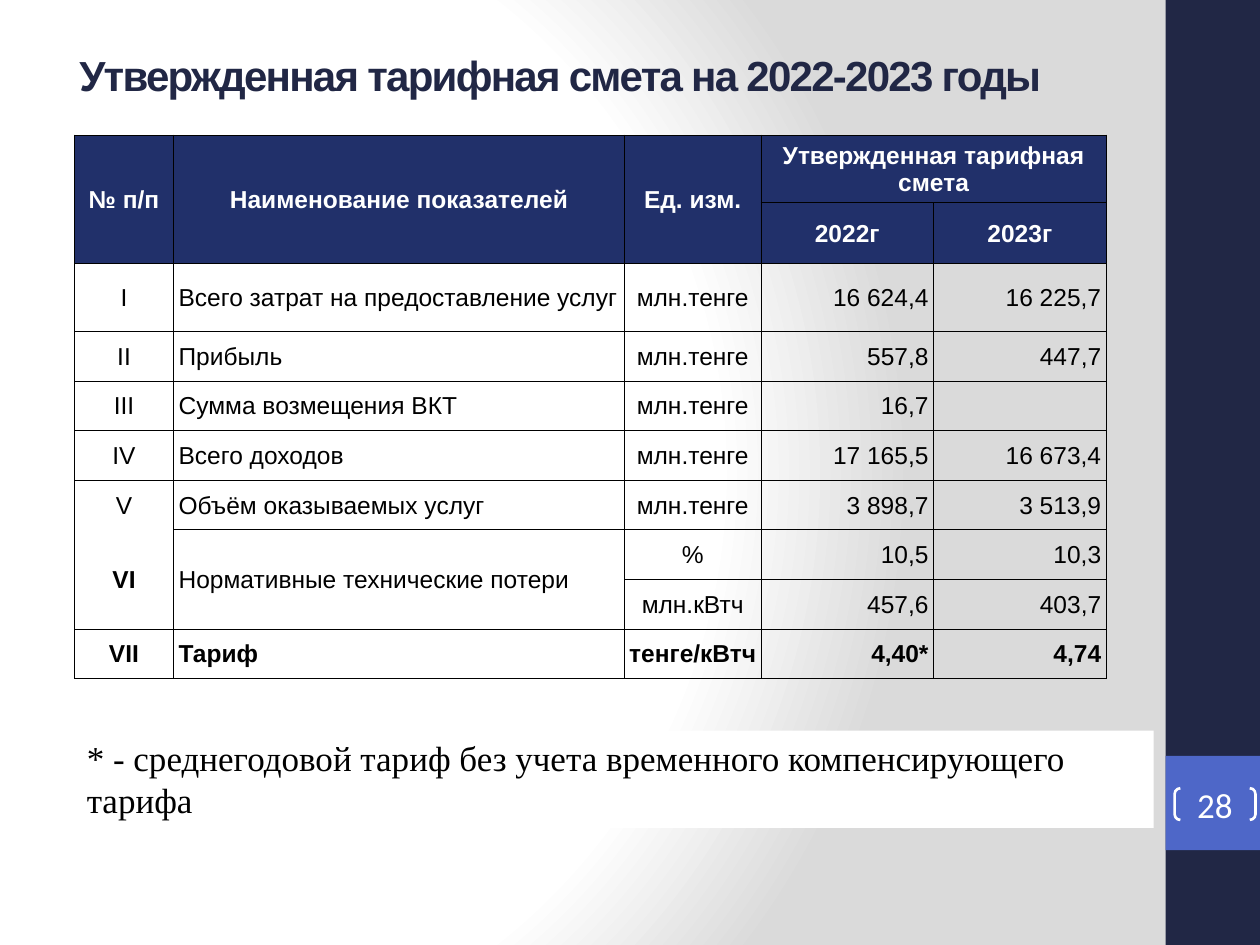
from lxml.etree import SubElement
from pptx import Presentation
from pptx.dml.color import RGBColor
from pptx.enum.shapes import MSO_SHAPE
from pptx.enum.text import MSO_ANCHOR, PP_ALIGN
from pptx.oxml.ns import qn
from pptx.util import Cm, Pt

WHITE = RGBColor(0xFF, 0xFF, 0xFF)
BLACK = RGBColor(0, 0, 0)
GREY = RGBColor(0xDA, 0xDA, 0xDA)
NAVY = RGBColor(0x21, 0x27, 0x45)
BLUE = RGBColor(0x4E, 0x67, 0xC8)
HEADER_BLUE = RGBColor(0x21, 0x30, 0x6A)

COLUMN_WIDTHS = [2.0, 9.09, 2.75, 3.48, 3.48]
ROW_HEIGHTS = [1.37, 1.22, 1.37] + [1.0] * 7
ALIGNMENTS = [PP_ALIGN.CENTER, PP_ALIGN.LEFT, PP_ALIGN.CENTER,
              PP_ALIGN.RIGHT, PP_ALIGN.RIGHT]
HEADER_ROWS = 2
ROWS = [
    ["№ п/п", "Наименование показателей", "Ед. изм.",
     "Утвержденная тарифная смета", ""],
    ["", "", "", "2022г", "2023г"],
    ["I", "Всего затрат на предоставление услуг", "млн.тенге",
     "16 624,4", "16 225,7"],
    ["II", "Прибыль", "млн.тенге", "557,8", "447,7"],
    ["III", "Сумма возмещения ВКТ", "млн.тенге", "16,7", ""],
    ["IV", "Всего доходов", "млн.тенге", "17 165,5", "16 673,4"],
    ["V", "Объём оказываемых услуг", "млн.тенге", "3 898,7", "3 513,9"],
    ["VI", "Нормативные технические потери", "%", "10,5", "10,3"],
    ["", "", "млн.кВтч", "457,6", "403,7"],
    ["VII", "Тариф", "тенге/кВтч", "4,40*", "4,74"],
]
VOLUME_ROW, LOSSES_ROW, TARIFF_ROW = 6, 7, 9
MERGES = [((0, 0), (1, 0)), ((0, 1), (1, 1)), ((0, 2), (1, 2)),
          ((0, 3), (0, 4)), ((7, 0), (8, 0)), ((7, 1), (8, 1))]


def write(paragraph, text, size, font, color, bold=False):
    run = paragraph.add_run()
    run.text = text
    run.font.size = Pt(size)
    run.font.name = font
    run.font.bold = bold
    run.font.color.rgb = color
    return run


def add_block(slide, left, top, width, height, color):
    block = slide.shapes.add_shape(MSO_SHAPE.RECTANGLE, Cm(left), Cm(top),
                                   Cm(width), Cm(height))
    block.shadow.inherit = False
    block.fill.solid()
    block.fill.fore_color.rgb = color
    block.line.fill.background()
    return block


def paint_background(slide):
    """Circular gradient, white on the left and grey on the right."""
    slide.background.fill.gradient()
    gradient = slide.element.find(".//" + qn("a:gradFill"))
    for child in list(gradient):
        gradient.remove(child)
    stops = SubElement(gradient, qn("a:gsLst"))
    for position, color in [(0, WHITE), (75, WHITE), (100, GREY)]:
        stop = SubElement(stops, qn("a:gs"), pos=str(position * 1000))
        SubElement(stop, qn("a:srgbClr"), val=str(color))
    circle = SubElement(gradient, qn("a:path"), {"path": "circle"})
    SubElement(circle, qn("a:fillToRect"),
               l="20000", t="50000", r="100000", b="50000")


def add_sidebar(slide, left, top, width, height):
    add_block(slide, left, top, width, height, NAVY)
    number_top = top + 0.8 * height
    add_block(slide, left, number_top, width, width, BLUE)
    brackets = slide.shapes.add_shape(
        MSO_SHAPE.DOUBLE_BRACKET, Cm(left + 0.18), Cm(number_top + 0.65),
        Cm(1.63), Cm(0.64))
    brackets.adjustments[0] = 0.18
    brackets.shadow.inherit = False
    brackets.fill.background()
    brackets.line.color.rgb = WHITE
    brackets.line.width = Pt(1.5)
    frame = brackets.text_frame
    frame.margin_left = frame.margin_right = 0
    frame.margin_top = frame.margin_bottom = 0
    frame.vertical_anchor = MSO_ANCHOR.MIDDLE
    frame.paragraphs[0].alignment = PP_ALIGN.CENTER
    write(frame.paragraphs[0], "28", 20, "Calibri", WHITE)


def add_title(slide, left, top, width, height):
    title = slide.shapes.add_textbox(Cm(left), Cm(top), Cm(width), Cm(height))
    frame = title.text_frame
    frame.word_wrap = True
    frame.vertical_anchor = MSO_ANCHOR.MIDDLE
    run = write(frame.paragraphs[0],
                "Утвержденная тарифная смета на 2022-2023 годы",
                24, "Arial", NAVY, bold=True)
    run.font._element.set("spc", "-100")


def add_footnote(slide, left, top, width, height):
    footnote = add_block(slide, left, top, width, height, WHITE)
    frame = footnote.text_frame
    frame.word_wrap = True
    frame.vertical_anchor = MSO_ANCHOR.TOP
    frame.paragraphs[0].alignment = PP_ALIGN.LEFT
    write(frame.paragraphs[0],
          "* - среднегодовой тариф без учета временного компенсирующего тарифа",
          20, "Times New Roman", BLACK)


def set_borders(cell, hidden):
    """Draw thin black borders, except on the sides listed in hidden."""
    properties = cell._tc.get_or_add_tcPr()
    for side in "LRTB":
        line = SubElement(properties, qn("a:ln" + side), w=str(Pt(0.5)))
        if side in hidden:
            SubElement(line, qn("a:noFill"))
        else:
            fill = SubElement(line, qn("a:solidFill"))
            SubElement(fill, qn("a:srgbClr"), val=str(BLACK))


def fill_cell(cell, row, column, text):
    is_header = row < HEADER_ROWS
    hidden_sides = {(VOLUME_ROW, 0): "B", (LOSSES_ROW, 0): "T"}
    set_borders(cell, hidden_sides.get((row, column), ""))
    if is_header:
        cell.fill.solid()
        cell.fill.fore_color.rgb = HEADER_BLUE
    else:
        cell.fill.background()
    alignment = PP_ALIGN.CENTER if is_header else ALIGNMENTS[column]
    cell.margin_left = Cm(0.1 if alignment == PP_ALIGN.LEFT else 0.02)
    cell.margin_right = Cm(0.1 if alignment == PP_ALIGN.RIGHT else 0.02)
    cell.margin_top, cell.margin_bottom = Cm(0.02), 0
    cell.vertical_anchor = MSO_ANCHOR.MIDDLE
    if text:
        paragraph = cell.text_frame.paragraphs[0]
        paragraph.alignment = alignment
        bold = (is_header or row == TARIFF_ROW
                or (row, column) == (LOSSES_ROW, 0))
        write(paragraph, text, 14, "Arial",
              WHITE if is_header else BLACK, bold)


def add_tariff_table(slide, left, top):
    table = slide.shapes.add_table(
        len(ROWS), len(COLUMN_WIDTHS), Cm(left), Cm(top),
        Cm(sum(COLUMN_WIDTHS)), Cm(sum(ROW_HEIGHTS))).table
    table.first_row = table.horz_banding = False
    for column, width in zip(table.columns, COLUMN_WIDTHS):
        column.width = Cm(width)
    for row, height in zip(table.rows, ROW_HEIGHTS):
        row.height = Cm(height)
    for start, end in MERGES:
        table.cell(*start).merge(table.cell(*end))
    for row, texts in enumerate(ROWS):
        for column, text in enumerate(texts):
            fill_cell(table.cell(row, column), row, column, text)


def main():
    presentation = Presentation()
    presentation.slide_width = Cm(25.4)
    presentation.slide_height = Cm(19.05)
    slide = presentation.slides.add_slide(presentation.slide_layouts[6])
    paint_background(slide)
    add_sidebar(slide, 23.5, 0, 1.9, 19.05)
    add_footnote(slide, 1.5, 14.73, 21.76, 1.96)
    add_title(slide, 1.35, 0.95, 20.4, 1.12)
    add_tariff_table(slide, 1.5, 2.72)
    presentation.save("out.pptx")


if __name__ == "__main__":
    main()
